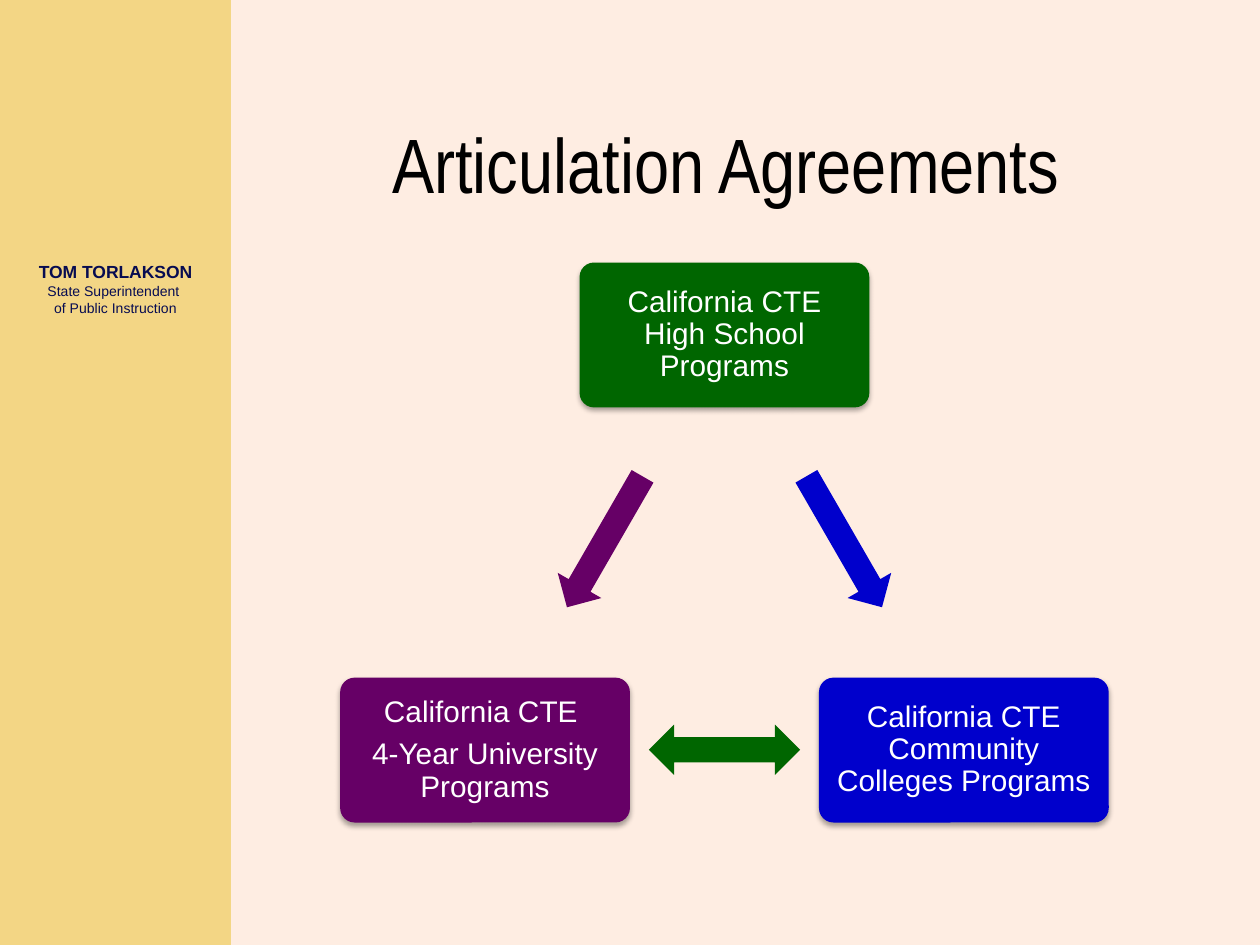
"""Build the Articulation Agreements slide."""
from dataclasses import dataclass

from lxml import etree
from pptx import Presentation
from pptx import util as u
from pptx.dml.color import RGBColor
from pptx.enum import shapes, text
from pptx.oxml.ns import qn


@dataclass(frozen=True)
class Theme:
    cream: str = "FEEDE2"
    sand: str = "F3D685"
    navy: str = "070C51"
    black: str = "000000"
    white: str = "FFFFFF"
    green: str = "006600"
    blue: str = "0000CC"
    purple: str = "660066"
    font: str = "Arial"
    title_font: str = "Arial Narrow"
    title: float = 44
    body: float = 17
    name: float = 10
    role: float = 8


class Deck:
    def __init__(self, theme):
        self.t = theme
        self.prs = Presentation()
        self.prs.slide_width, self.prs.slide_height = u.Pt(720), u.Pt(540)
        self.s = self.prs.slides.add_slide(self.prs.slide_layouts[6])

    def shape(self, kind, x, y, w, h, fill, rot=0):
        sp = self.s.shapes.add_shape(kind, u.Pt(x), u.Pt(y), u.Pt(w), u.Pt(h))
        sp.fill.solid()
        sp.fill.fore_color.rgb = RGBColor.from_string(fill)
        sp.line.fill.background()
        sp.shadow.inherit = False
        sp.rotation = rot
        return sp

    def put_text(self, sp, lines, sizes, color, font, inset=(7.2, 3.6), bold=()):
        tf = sp.text_frame
        tf.word_wrap = True
        tf.vertical_anchor = text.MSO_ANCHOR.MIDDLE
        tf.margin_left = tf.margin_right = u.Pt(inset[0])
        tf.margin_top = tf.margin_bottom = u.Pt(inset[1])
        tf.text = "\n".join(lines)
        for i, (p, size) in enumerate(zip(tf.paragraphs, sizes)):
            p.alignment = text.PP_ALIGN.CENTER
            for r in p.runs:
                r.font.name, r.font.size, r.font.bold = font, u.Pt(size), i in bold
                r.font.color.rgb = RGBColor.from_string(color)
        return tf

    def label(self, x, y, w, h, lines, sizes, color, font, bold=()):
        sp = self.s.shapes.add_textbox(u.Pt(x), u.Pt(y), u.Pt(w), u.Pt(h))
        self.put_text(sp, lines, sizes, color, font, bold=bold)

    def shadow(self, sp):
        effects = sp._element.spPr.find(qn("a:effectLst"))
        shdw = etree.SubElement(effects, qn("a:outerShdw"), blurRad=str(u.Pt(3.1)),
                                dist=str(u.Pt(1.8)), dir="5400000", rotWithShape="0")
        clr = etree.SubElement(shdw, qn("a:srgbClr"), val=self.t.black)
        etree.SubElement(clr, qn("a:alpha"), val="35000")

    def box(self, cx, y, lines, fill):
        w, h = 165.6, 82.8
        sp = self.shape(shapes.MSO_SHAPE.ROUNDED_RECTANGLE, cx - w / 2, y, w, h, fill)
        sp.adjustments[0] = 0.1
        self.shadow(sp)
        tf = self.put_text(sp, lines, [self.t.body] * len(lines), self.t.white,
                           self.t.font, inset=(7.4, 7.4))
        for p in tf.paragraphs:
            p.line_spacing, p.space_after = 0.9, u.Pt(6)

    def arrow(self, kind, cx, cy, fill, rot):
        w, h = 86.4, 28.8
        self.shape(kind, cx - w / 2, cy - h / 2, w, h, fill, rot)


def main():
    t = Theme()
    d = Deck(t)
    kind = shapes.MSO_SHAPE
    d.shape(kind.RECTANGLE, 0, 0, 720, 540, t.cream)
    d.shape(kind.RECTANGLE, 0, 0, 132, 540, t.sand)
    d.label(6, 138, 120, 54, ["TOM TORLAKSON", "State Superintendent ", "of Public Instruction"],
            [t.name, t.role, t.role], t.navy, t.font, bold=(0,))
    d.label(150, 48, 540, 90, ["Articulation Agreements "], [t.title], t.black, t.title_font)

    mid, reach, top, bottom = 414, 136.8, 150, 387.2
    d.box(mid, top, ["California CTE High School Programs"], t.green)
    d.box(mid + reach, bottom, ["California CTE Community Colleges Programs"], t.blue)
    d.box(mid - reach, bottom, ["California CTE ", "4-Year University Programs"], t.purple)

    d.arrow(kind.RIGHT_ARROW, mid + reach / 2, 309.6, t.blue, 60)
    d.arrow(kind.LEFT_RIGHT_ARROW, mid, 428.4, t.green, 180)
    d.arrow(kind.LEFT_ARROW, mid - reach / 2, 309.6, t.purple, 300)
    d.prs.save("out.pptx")


if __name__ == "__main__":
    main()
